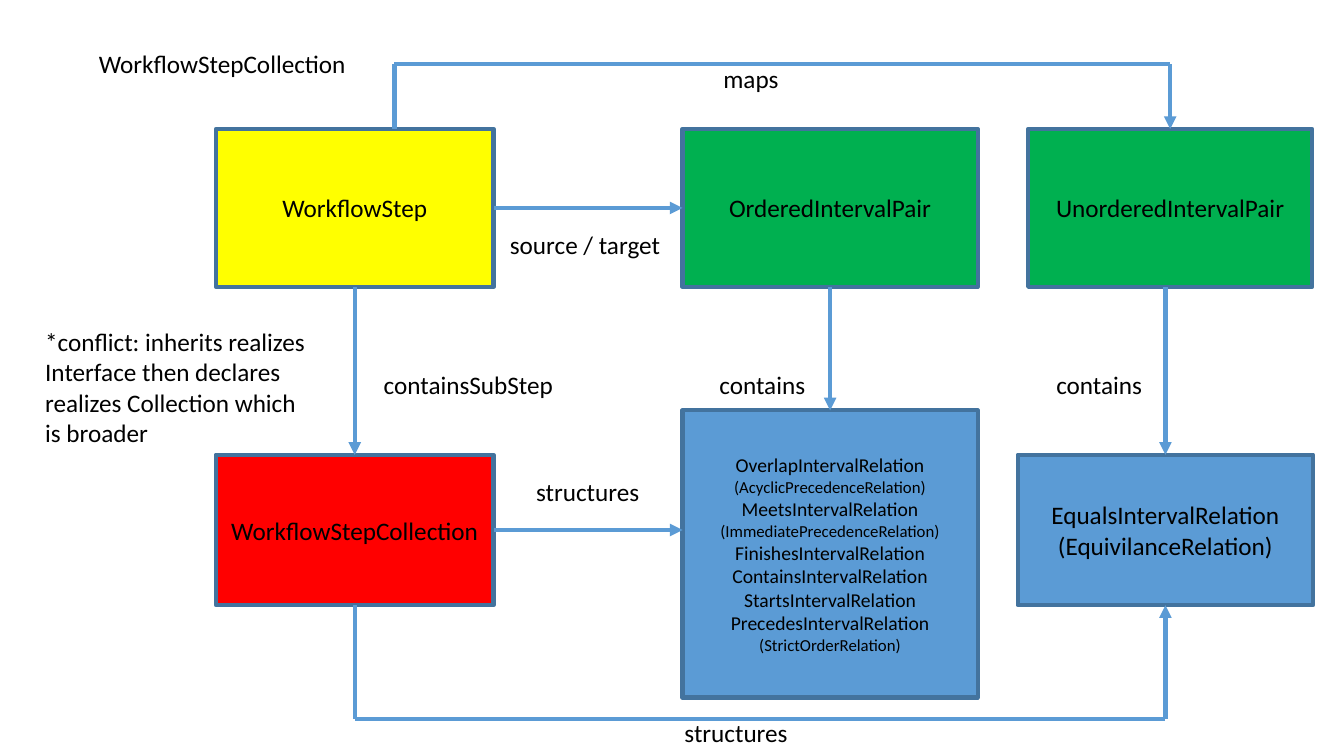
from dataclasses import dataclass

from lxml.etree import SubElement
from pptx import Presentation
from pptx.dml.color import RGBColor as Rgb
from pptx.enum.shapes import MSO_CONNECTOR as Connector, MSO_SHAPE as Shape
from pptx.enum.text import MSO_ANCHOR as Anchor, MSO_AUTO_SIZE as AutoSize, PP_ALIGN as Align
from pptx.oxml.ns import qn
from pptx.util import Cm, Pt

TOP, LEFT, BOTTOM, RIGHT = range(4)


@dataclass(frozen=True)
class Theme:
    """Colours, font and sizes of the diagram."""
    font: str = "Calibri"
    ink: str = "000000"
    step: str = "FFFF00"
    collection: str = "FF0000"
    pair: str = "00B050"
    relation: str = "5B9BD5"
    outline: str = "43739E"
    arrow: str = "5B9BD5"
    body: int = 18
    item: int = 14
    detail: int = 12
    stroke: int = 3


def write_text(frame, text, *, theme, sizes=None, align=Align.LEFT):
    """Fill a text frame with one paragraph per line of text."""
    lines = text.split("\n")
    for index, line in enumerate(lines):
        paragraph = frame.paragraphs[0] if index == 0 else frame.add_paragraph()
        paragraph.alignment = align
        run = paragraph.add_run()
        run.text = line
        run.font.name = theme.font
        run.font.size = Pt(sizes[index] if sizes else theme.body)
        run.font.color.rgb = Rgb.from_string(theme.ink)


def side_middle(box, side):
    """Return the middle of one side of a box."""
    across = {LEFT: 0, RIGHT: box.width}.get(side, box.width // 2)
    down = {TOP: 0, BOTTOM: box.height}.get(side, box.height // 2)
    return box.left + across, box.top + down


class Diagram:
    """Draws styled elements on the current slide."""

    def __init__(self, slide, theme):
        """Keep the slide and its style."""
        self.shapes = slide.shapes
        self.theme = theme

    def box(self, text, left, top, width, height, fill, sizes=None):
        """Add a class box with centred text."""
        box = self.shapes.add_shape(Shape.RECTANGLE, Cm(left), Cm(top), Cm(width), Cm(height))
        box.shadow.inherit = False
        box.fill.solid()
        box.fill.fore_color.rgb = Rgb.from_string(fill)
        box.line.color.rgb = Rgb.from_string(self.theme.outline)
        box.line.width = Pt(self.theme.stroke)
        box.text_frame.word_wrap = True
        box.text_frame.vertical_anchor = Anchor.MIDDLE
        write_text(box.text_frame, text, theme=self.theme, sizes=sizes, align=Align.CENTER)
        return box

    def label(self, text, left, top, width, height=1.03, wrap=False):
        """Add a free-standing label."""
        frame = self.shapes.add_textbox(Cm(left), Cm(top), Cm(width), Cm(height)).text_frame
        frame.word_wrap = wrap
        frame.auto_size = AutoSize.SHAPE_TO_FIT_TEXT
        write_text(frame, text, theme=self.theme)

    def link(self, start, end, arrow=True):
        """Join two ends, each a (box, side) pair or an (x, y) point in Cm."""
        ends = (start, end)
        glued = [not isinstance(place[0], (int, float)) for place in ends]
        points = [side_middle(*place) if joined else (Cm(place[0]), Cm(place[1]))
                  for place, joined in zip(ends, glued)]
        link = self.shapes.add_connector(Connector.STRAIGHT, *points[0], *points[1])
        for connect, place, joined in zip((link.begin_connect, link.end_connect), ends, glued):
            if joined:
                connect(*place)
        link.line.color.rgb = Rgb.from_string(self.theme.arrow)
        link.line.width = Pt(self.theme.stroke)
        if arrow:
            SubElement(link.line._get_or_add_ln(), qn("a:tailEnd"), type="triangle")
        SubElement(link._element.spPr, qn("a:effectLst"))


def main():
    """Build the workflow class diagram."""
    deck = Presentation()
    deck.slide_width, deck.slide_height = Cm(33.87), Cm(19.05)
    theme = Theme()
    diagram = Diagram(deck.slides.add_slide(deck.slide_layouts[6]), theme)

    step_x, ordered_x, equals_x, unordered_x = 5.44, 17.2, 25.65, 25.91
    step_width, relation_width = 7, 7.44
    upper_y, upper_height = 3.25, 3.98
    lower_y, lower_height = 11.46, 3.79
    upper_bottom = upper_y + upper_height
    maps_x, maps_y, structures_y = 9.94, 1.62, 18.11
    step_middle = step_x + step_width / 2
    equals_middle = equals_x + relation_width / 2
    unordered_width = 7.16
    unordered_middle = unordered_x + unordered_width / 2

    step = diagram.box("WorkflowStep", step_x, upper_y, step_width, upper_height, theme.step)
    collection = diagram.box("WorkflowStepCollection", step_x, lower_y, step_width,
                             lower_height, theme.collection)
    relations = (
        "OverlapIntervalRelation", "(AcyclicPrecedenceRelation)",
        "MeetsIntervalRelation", "(ImmediatePrecedenceRelation)",
        "FinishesIntervalRelation", "ContainsIntervalRelation", "StartsIntervalRelation",
        "PrecedesIntervalRelation", "(StrictOrderRelation)",
    )
    ordered_relations = diagram.box(
        "\n".join(relations), ordered_x, 10.34, relation_width, 7.24, theme.relation,
        sizes=[theme.detail if name.startswith("(") else theme.item for name in relations])
    ordered = diagram.box("OrderedIntervalPair", ordered_x, upper_y, relation_width,
                          upper_height, theme.pair)
    equals = diagram.box("EqualsIntervalRelation\n(EquivilanceRelation)", equals_x, lower_y,
                         relation_width, lower_height, theme.relation)
    unordered = diagram.box("UnorderedIntervalPair", unordered_x, upper_y, unordered_width,
                            upper_height, theme.pair)

    diagram.link((step, BOTTOM), (collection, TOP))
    diagram.link((collection, RIGHT), (ordered_x, lower_y + lower_height / 2))
    diagram.link((ordered, BOTTOM), (ordered_relations, TOP))
    diagram.link((step, RIGHT), (ordered, LEFT))
    diagram.link((equals_middle, upper_bottom), (equals, TOP))

    diagram.link((unordered_middle, maps_y), (unordered, TOP))
    diagram.link((maps_x, maps_y), (unordered_middle, maps_y), arrow=False)
    diagram.link((maps_x, maps_y), (maps_x, upper_y), arrow=False)

    diagram.link((equals_middle, structures_y), (equals, BOTTOM))
    diagram.link((step_middle, structures_y), (equals_middle, structures_y), arrow=False)
    diagram.link((collection, BOTTOM), (step_middle, structures_y), arrow=False)

    contains_y = 9.17
    diagram.label("containsSubStep", 9.42, contains_y, 4.83)
    for contains_x in (17.88, 26.37):
        diagram.label("contains", contains_x, contains_y, 2.69)
    for structures_label in ((13.26, 11.89), (17, 17.96)):
        diagram.label("structures", *structures_label, 3.15)
    diagram.label("maps", 17.98, 1.47, 1.91)
    diagram.label("WorkflowStepCollection", 2.24, 1.09, 6.81)
    diagram.label("source / target", 12.6, 5.66, 4.6, wrap=True)
    diagram.label("*conflict: inherits realizes Interface then declares realizes "
                  "Collection which is broader", 0.89, 8.1, 7.24, 3.33, wrap=True)

    deck.save("out.pptx")


if __name__ == "__main__":
    main()
